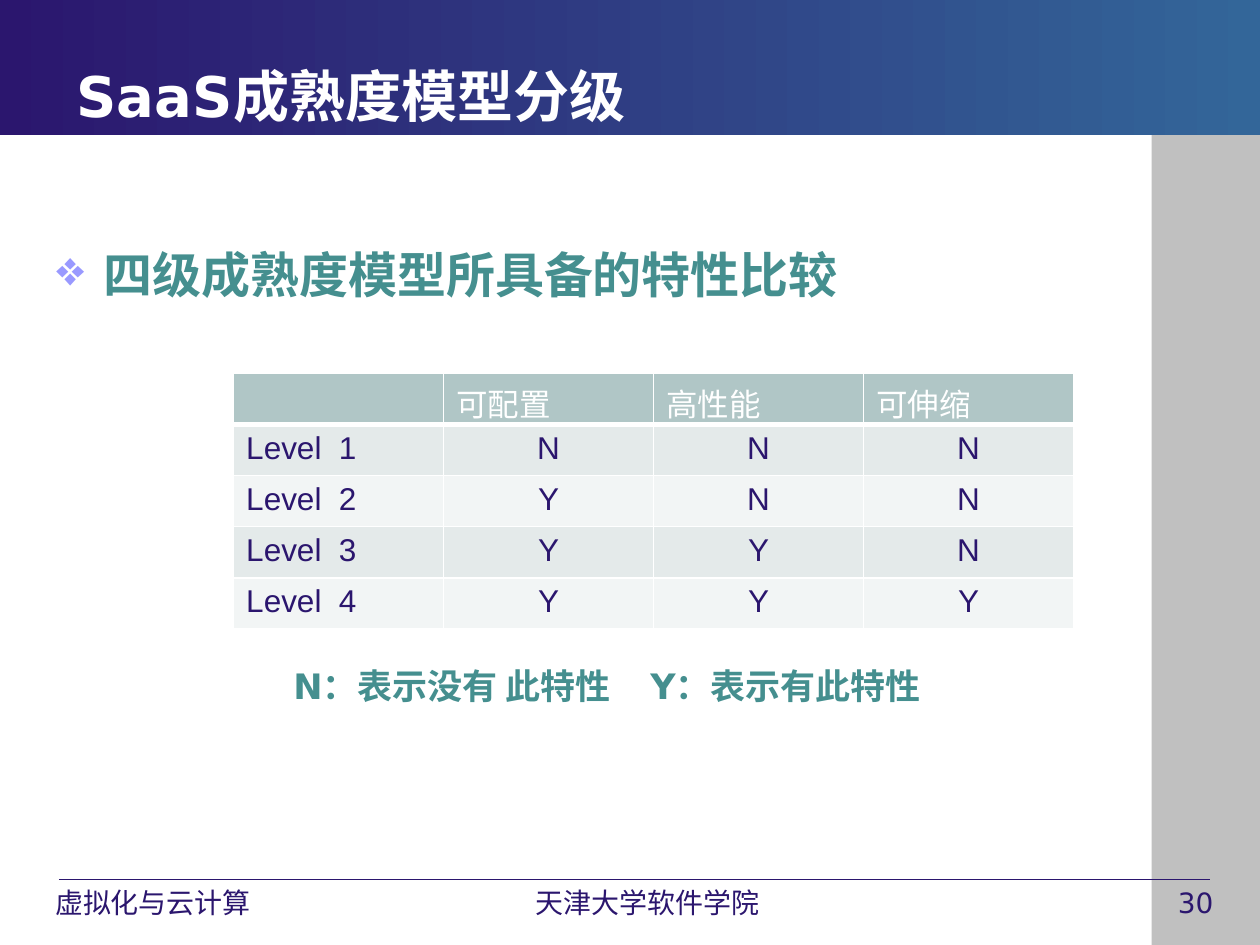
from dataclasses import dataclass

from lxml.etree import SubElement
from pptx import Presentation
from pptx.dml.color import RGBColor
from pptx.enum.shapes import MSO_CONNECTOR as Connector, MSO_SHAPE as Shape
from pptx.enum.text import MSO_ANCHOR as Anchor, PP_ALIGN as Align
from pptx.oxml.ns import qn
from pptx.util import Pt


@dataclass(frozen=True)
class Theme:
    navy: str = "2B166E"
    blue: str = "336699"
    teal: str = "458F8F"
    lilac: str = "9999FF"
    gray: str = "C0C0C0"
    white: str = "FFFFFF"
    header: str = "B0C6C6"
    bands: tuple = ("E4EAEA", "F2F5F5")
    font: str = "DejaVu Sans"
    table_font: str = "Arial"
    title: int = 32
    heading: int = 28
    legend: int = 20
    cell: int = 18
    footer: int = 16


THEME = Theme()

# Content
TITLE = "SaaS成熟度模型分级"
HEADING = "四级成熟度模型所具备的特性比较"
LEGEND = "N：表示没有 此特性\tY：表示有此特性"
ROWS = [
    ("", "可配置", "高性能", "可伸缩"),
    ("Level  1", "N", "N", "N"),
    ("Level  2", "Y", "N", "N"),
    ("Level  3", "Y", "Y", "N"),
    ("Level  4", "Y", "Y", "Y"),
]
# Footer: text, left, width, alignment
FOOTERS = [
    ("虚拟化与云计算", 17.4, 140, Align.CENTER),
    ("天津大学软件学院", 288.7, 162.7, Align.CENTER),
    ("30", 666, 51, Align.LEFT),
]

# Layout
PAGE_WIDTH, PAGE_HEIGHT = 720, 540
BANNER_HEIGHT = 77
SIDE_LEFT = 658
FOOTER_TOP = 502.5
TABLE_LEFT, TABLE_TOP = 133.5, 213.4
COLUMN_WIDTH, ROW_HEIGHT = 120, 29.2
LEGEND_TAB = 204
BULLET_INDENT = 27


def color(value):
    return RGBColor.from_string(value)


def style(para, size, ink, font=THEME.font, bold=False, align=Align.LEFT):
    para.alignment = align
    for span in para.runs:
        span.font.size, span.font.name, span.font.bold = Pt(size), font, bold
        span.font.color.rgb = color(ink)


def add_text(page, text, left, top, width, height, size, ink,
             anchor=Anchor.MIDDLE, **options):
    box = page.shapes.add_textbox(Pt(left), Pt(top), Pt(width), Pt(height))
    frame = box.text_frame
    frame.word_wrap, frame.vertical_anchor = True, anchor
    para = frame.paragraphs[0]
    para.text = text
    style(para, size, ink, **options)
    return para


def add_block(page, left, top, width, height):
    block = page.shapes.add_shape(Shape.RECTANGLE, Pt(left), Pt(top), Pt(width), Pt(height))
    block.shadow.inherit = False
    block.line.fill.background()
    return block


def set_bullet(para, mark, ink, indent):
    props = para._p.get_or_add_pPr()
    props.set("marL", str(Pt(indent)))
    props.set("indent", str(-Pt(indent)))
    tint = SubElement(props, qn("a:buClr"))
    SubElement(tint, qn("a:srgbClr"), val=ink)
    SubElement(props, qn("a:buChar"), char=mark)


def set_tab(para, position):
    tabs = SubElement(para._p.get_or_add_pPr(), qn("a:tabLst"))
    SubElement(tabs, qn("a:tab"), pos=str(Pt(position)), algn="l")


def set_borders(cell, ink, bottom):
    props = cell._tc.get_or_add_tcPr()
    for side, width in (("L", 1), ("R", 1), ("T", 1), ("B", bottom)):
        edge = SubElement(props, qn(f"a:ln{side}"), w=str(Pt(width)))
        fill = SubElement(edge, qn("a:solidFill"))
        SubElement(fill, qn("a:srgbClr"), val=ink)


def add_background(page):
    side = add_block(page, SIDE_LEFT, BANNER_HEIGHT,
                     PAGE_WIDTH - SIDE_LEFT, PAGE_HEIGHT - BANNER_HEIGHT)
    side.fill.solid()
    side.fill.fore_color.rgb = color(THEME.gray)

    rule = page.shapes.add_connector(Connector.STRAIGHT, Pt(33.7), Pt(FOOTER_TOP),
                                     Pt(691.3), Pt(FOOTER_TOP))
    rule.line.color.rgb, rule.line.width = color(THEME.navy), Pt(0.75)
    SubElement(rule._element.spPr, qn("a:effectLst"))

    banner = add_block(page, 0, 0, PAGE_WIDTH, BANNER_HEIGHT)
    banner.fill.gradient()
    banner.fill.gradient_angle = 0
    for stop, ink, place in zip(banner.fill.gradient_stops, (THEME.navy, THEME.blue), (0, 1)):
        stop.color.rgb, stop.position = color(ink), place


def add_levels(page):
    count = len(ROWS[0])
    table = page.shapes.add_table(len(ROWS), count, Pt(TABLE_LEFT), Pt(TABLE_TOP),
                                  Pt(COLUMN_WIDTH * count),
                                  Pt(ROW_HEIGHT * len(ROWS))).table
    for r, values in enumerate(ROWS):
        is_header = r == 0
        for c, value in enumerate(values):
            cell = table.cell(r, c)
            set_borders(cell, THEME.white, 3 if is_header else 1)
            cell.fill.solid()
            cell.fill.fore_color.rgb = color(
                THEME.header if is_header else THEME.bands[(r - 1) % 2])
            para = cell.text_frame.paragraphs[0]
            para.text = value
            style(para, THEME.cell, THEME.white if is_header else THEME.navy,
                  THEME.table_font,
                  align=Align.LEFT if is_header or c == 0 else Align.CENTER)


def main():
    deck = Presentation()
    deck.slide_width, deck.slide_height = Pt(PAGE_WIDTH), Pt(PAGE_HEIGHT)
    page = deck.slides.add_slide(deck.slide_layouts[6])
    add_background(page)

    # Footer
    for text, left, width, align in FOOTERS:
        add_text(page, text, left, FOOTER_TOP, width, 25.2, THEME.footer, THEME.navy,
                 anchor=Anchor.TOP, align=align)

    # Title and heading
    add_text(page, TITLE, 36.7, 9.4, 648, 90, THEME.title, THEME.white, bold=True)
    heading = add_text(page, HEADING, 25.2, 139.7, 648, 40, THEME.heading, THEME.teal,
                       anchor=Anchor.TOP, bold=True)
    heading.line_spacing = 0.9
    set_bullet(heading, "❖", THEME.lilac, BULLET_INDENT)

    # Comparison table and its legend
    add_levels(page)
    legend = add_text(page, LEGEND, 160.5, 375, 420, 34, THEME.legend, THEME.teal, bold=True)
    set_tab(legend, LEGEND_TAB)

    deck.save("out.pptx")


if __name__ == "__main__":
    main()
